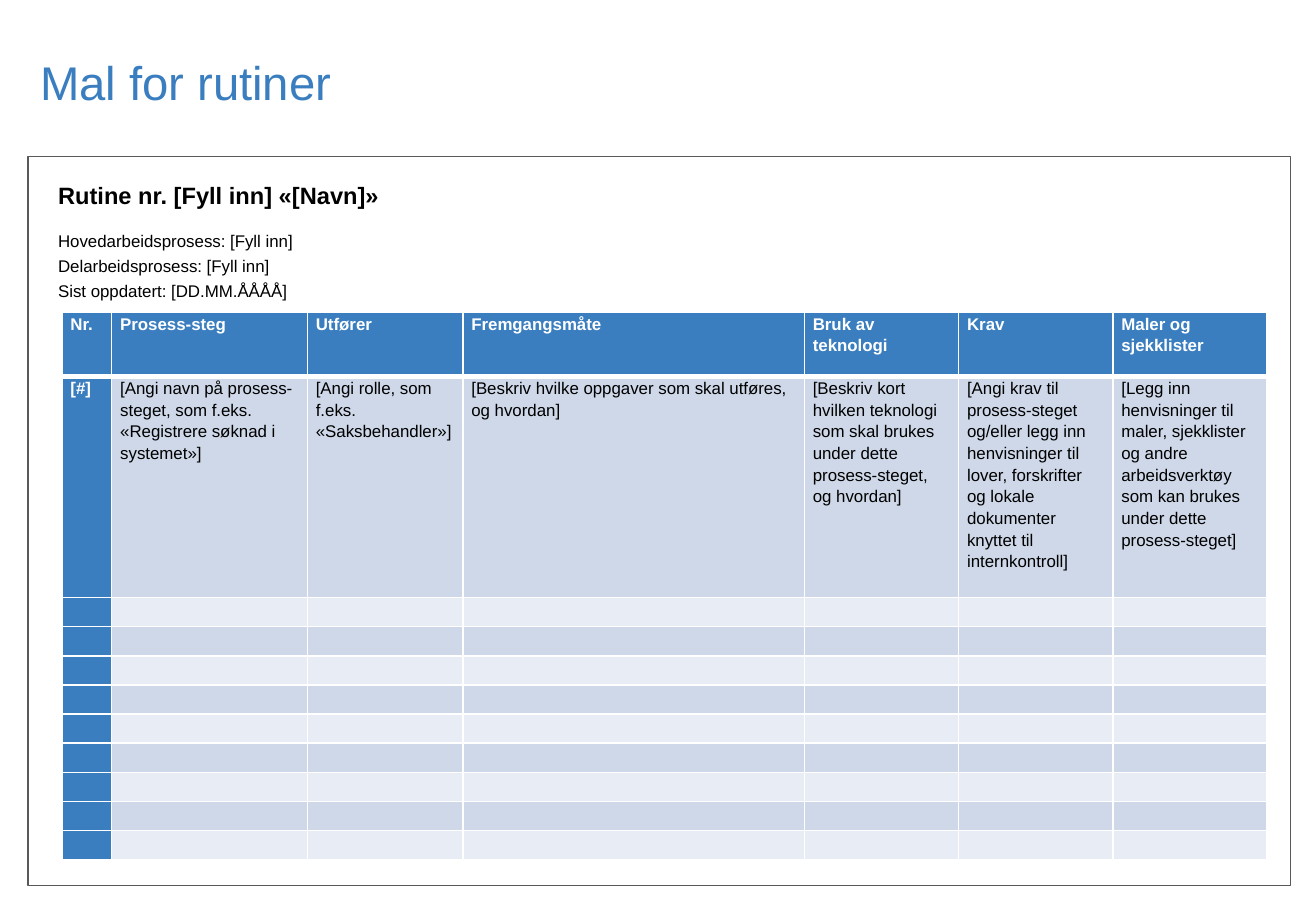
from dataclasses import dataclass

from lxml import etree
from pptx import Presentation, util as u
from pptx.dml import color
from pptx.enum import shapes, text
from pptx.oxml import ns

BLUE, WHITE, BLACK, GRAY = "3A7EC0", "FFFFFF", "000000", "595959"
BANDS = ("CED8E8", "E8ECF4")
FONT = "Arial"
EMPTY = 9


@dataclass
class Column:
    width: float
    head: str
    hint: str


@dataclass
class Note:
    top: float
    size: float
    bold: bool
    lines: tuple[str, ...]


COLUMNS = [
    Column(0.41, "Nr.", "[#]"),
    Column(1.61, "Prosess-steg",
           "[Angi navn på prosess-steget, som f.eks. "
           "«Registrere søknad i systemet»]"),
    Column(1.28, "Utfører", "[Angi rolle, som f.eks. «Saksbehandler»]"),
    Column(2.81, "Fremgangsmåte",
           "[Beskriv hvilke oppgaver som skal utføres, og hvordan]"),
    Column(1.27, "Bruk av teknologi",
           "[Beskriv kort hvilken teknologi som skal brukes under dette "
           "prosess-steget, og hvordan]"),
    Column(1.27, "Krav",
           "[Angi krav til prosess-steget og/eller legg inn henvisninger til "
           "lover, forskrifter og lokale dokumenter knyttet til internkontroll]"),
    Column(1.27, "Maler og sjekklister",
           "[Legg inn henvisninger til maler, sjekklister og andre "
           "arbeidsverktøy som kan brukes under dette prosess-steget]"),
]
HEIGHTS = [0.53, 1.82] + [0.24] * EMPTY

NOTES = [
    Note(1.44, 14, True, ("Rutine nr. [Fyll inn] «[Navn]»",)),
    Note(1.85, 10, False, ("Hovedarbeidsprosess: [Fyll inn]",
                           "Delarbeidsprosess: [Fyll inn]",
                           "Sist oppdatert: [DD.MM.ÅÅÅÅ]")),
]


def rgb(tone: str) -> color.RGBColor:
    return color.RGBColor.from_string(tone)


def apply(item, **values) -> None:
    for name, value in values.items():
        setattr(item, name, value)


def box(left: float, top: float, width: float, height: float) -> list[u.Length]:
    return [u.Inches(n) for n in (left, top, width, height)]


def write(para, words: str, size: float, tone: str, bold: bool = False) -> None:
    run = para.add_run()
    run.text = words
    apply(run.font, name=FONT, size=u.Pt(size), bold=bold)
    run.font.color.rgb = rgb(tone)


def add_title(slide, words: str) -> None:
    title = slide.shapes.title
    left, top, width, height = box(0.23, 0.37, 10.39, 0.61)
    apply(title, left=left, top=top, width=width, height=height)
    apply(title.text_frame, vertical_anchor=text.MSO_ANCHOR.MIDDLE,
          auto_size=text.MSO_AUTO_SIZE.NONE, word_wrap=True)
    para = title.text_frame.paragraphs[0]
    para.alignment = text.PP_ALIGN.LEFT
    write(para, words, 28, BLUE)


def add_frame(slide) -> None:
    frame = slide.shapes.add_shape(shapes.MSO_SHAPE.RECTANGLE,
                                   *box(0.23, 1.29, 10.39, 6))
    frame.shadow.inherit = False
    frame.fill.background()
    frame.line.color.rgb = rgb(GRAY)
    frame.line.width = u.Pt(0.75)


def add_note(slide, note: Note) -> None:
    frame = slide.shapes.add_textbox(*box(0.38, note.top, 9.96, 0.35)).text_frame
    frame.word_wrap = True
    for i, line in enumerate(note.lines):
        para = frame.paragraphs[0] if i == 0 else frame.add_paragraph()
        para.space_before = u.Pt(2.7 if i else 0)
        write(para, line, note.size, BLACK, note.bold)


def add_edge(cell, side: str, width: float) -> None:
    props = cell._tc.get_or_add_tcPr()
    edge = etree.SubElement(props, ns.qn(f"a:ln{side}"), w=str(u.Pt(width)))
    fill = etree.SubElement(edge, ns.qn("a:solidFill"))
    etree.SubElement(fill, ns.qn("a:srgbClr"), val=WHITE)


def fill_cell(cell, row: int, col: int, words: str) -> None:
    head = row == 0 or col == 0
    apply(cell, margin_left=u.Inches(0.07), margin_right=u.Inches(0.07),
          margin_top=0, margin_bottom=0)
    # Borders come before the fill; the header has a thick lower edge
    for side in "LRTB":
        thick = (row, side) in ((0, "B"), (1, "T"))
        add_edge(cell, side, 3 if thick else 1)
    cell.fill.solid()
    cell.fill.fore_color.rgb = rgb(BLUE if head else BANDS[(row - 1) % 2])
    para = cell.text_frame.paragraphs[0]
    para.line_spacing = 1.15
    if words:
        write(para, words, 10, WHITE if head else BLACK, head)
    else:
        etree.SubElement(para._p, ns.qn("a:endParaRPr"), sz="1000")


def add_steps(slide) -> None:
    width = sum(c.width for c in COLUMNS)
    table = slide.shapes.add_table(
        len(HEIGHTS), len(COLUMNS), *box(0.51, 2.57, width, sum(HEIGHTS))).table
    for row, height in zip(table.rows, HEIGHTS):
        row.height = u.Inches(height)
    for c, column in enumerate(COLUMNS):
        table.columns[c].width = u.Inches(column.width)
        for r, words in enumerate([column.head, column.hint] + [""] * EMPTY):
            fill_cell(table.cell(r, c), r, c, words)


def main() -> None:
    deck = Presentation()
    apply(deck, slide_width=u.Inches(10.83), slide_height=u.Inches(7.5))
    slide = deck.slides.add_slide(deck.slide_layouts.get_by_name("Title Only"))
    add_title(slide, "Mal for rutiner")
    add_frame(slide)
    for note in NOTES:
        add_note(slide, note)
    add_steps(slide)
    deck.save("out.pptx")


if __name__ == "__main__":
    main()
